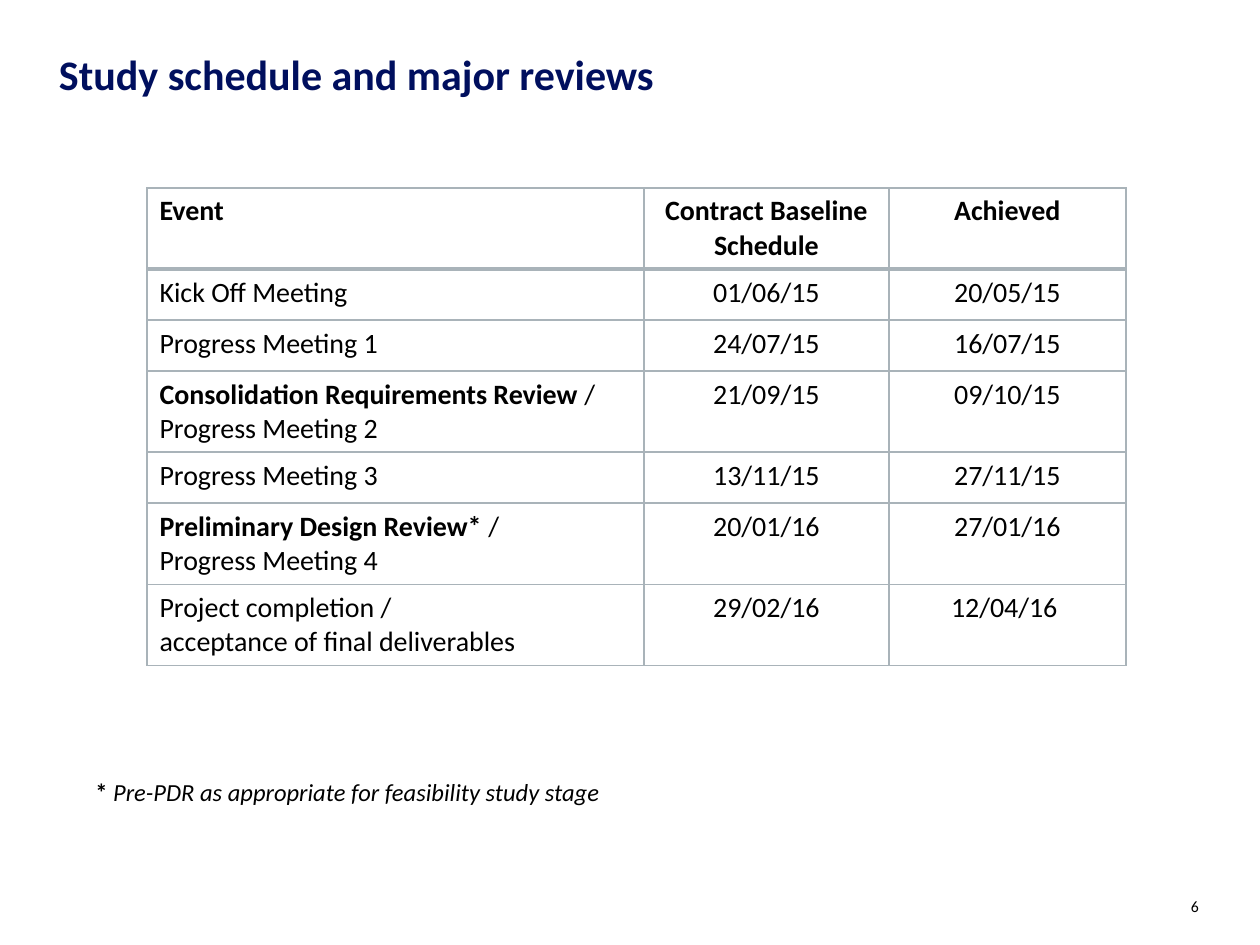
import lxml.etree
import pptx
import pptx.dml.color
import pptx.enum.text
import pptx.oxml.ns
import pptx.util

EMU_PER_PX = 914400 / 126
FONT, BLACK, NAVY, GRID = "Calibri", "000000", "000F5E", "A9B3B9"
ALIGN = pptx.enum.text.PP_ALIGN
FIT = pptx.enum.text.MSO_AUTO_SIZE
COLUMN_WIDTHS = [497, 245, 237]
ROW_HEIGHT = 51
SCHEDULE = [
    ([[("Event", True)]], "Contract Baseline Schedule", "Achieved"),
    ([[("Kick Off Meeting", False)]], "01/06/15", "20/05/15"),
    ([[("Progress Meeting 1", False)]], "24/07/15", "16/07/15"),
    ([[("Consolidation Requirements Review ", True), ("/ Progress Meeting 2", False)]],
     "21/09/15", "09/10/15"),
    ([[("Progress Meeting 3", False)]], "13/11/15", "27/11/15"),
    ([[("Preliminary Design Review* ", True), ("/", False)], [("Progress Meeting 4", False)]],
     "20/01/16", "27/01/16"),
    ([[("Project completion /", False)], [("acceptance of final deliverables", False)]],
     "29/02/16", "12/04/16 "),
]


def px(length):
    """Turn pixels into EMU."""
    return pptx.util.Emu(round(length * EMU_PER_PX))


def colour(code):
    """Turn a hex string into a colour."""
    return pptx.dml.color.RGBColor.from_string(code)


def style(para, size, code=BLACK, bold=None, align=ALIGN.LEFT, spacing=None):
    """Set the font, alignment and line spacing of a paragraph."""
    para.alignment = align
    if spacing:
        para.line_spacing = pptx.util.Pt(spacing)
    para.font.name = FONT
    para.font.size = pptx.util.Pt(size)
    para.font.color.rgb = colour(code)
    para.font.bold = bold


def place(box, left, top, width, height):
    """Move and size a box."""
    box.left, box.top, box.width, box.height = map(px, (left, top, width, height))


def remove_insets(frame):
    """Anchor text at the top with no inner margins."""
    frame.margin_left = frame.margin_right = frame.margin_top = frame.margin_bottom = 0
    frame.vertical_anchor = pptx.enum.text.MSO_ANCHOR.TOP
    frame.auto_size = FIT.NONE
    frame.word_wrap = True


def add_title(page, text):
    """Fill the title placeholder."""
    box = page.shapes.title
    place(box, 59, 53, 908, 106)
    remove_insets(box.text_frame)
    box.text_frame.text = text
    style(box.text_frame.paragraphs[0], 24, NAVY, True, spacing=26)


def add_page_number(page, text):
    """Add the page number at the lower right."""
    box = page.shapes.add_textbox(px(1125), px(896), px(74), px(30))
    remove_insets(box.text_frame)
    box.text_frame.text = text
    style(box.text_frame.paragraphs[0], 9, align=ALIGN.RIGHT, spacing=11)


def add_footnote(page, mark, text):
    """Add the footnote with a bold mark and italic text."""
    box = page.shapes.add_textbox(px(83), px(771), px(544), px(43))
    box.text_frame.word_wrap = False
    box.text_frame.auto_size = FIT.SHAPE_TO_FIT_TEXT
    para = box.text_frame.paragraphs[0]
    style(para, 14)
    for words, is_mark in ((mark, True), (text, False)):
        span = para.add_run()
        span.text = words
        span.font.bold, span.font.italic = is_mark, not is_mark


def set_borders(cell, top, bottom):
    """Draw the four borders of a cell, widths in points."""
    properties = cell._tc.get_or_add_tcPr()
    qn = pptx.oxml.ns.qn
    for side, width in (("lnL", 1), ("lnR", 1), ("lnT", top), ("lnB", bottom)):
        line = lxml.etree.SubElement(properties, qn(f"a:{side}"), w=str(pptx.util.Pt(width)))
        fill = lxml.etree.SubElement(line, qn("a:solidFill"))
        lxml.etree.SubElement(fill, qn("a:srgbClr"), val=GRID)


def fill_cell(cell, paragraphs, align):
    """Write paragraphs of (text, bold) spans into a cell."""
    frame = cell.text_frame
    for index, spans in enumerate(paragraphs):
        para = frame.add_paragraph() if index else frame.paragraphs[0]
        style(para, 16, bold=spans[0][1] if len(spans) == 1 else None, align=align)
        for text, bold in spans:
            span = para.add_run()
            span.text = text
            if len(spans) > 1:
                span.font.bold = bold


def add_schedule(page):
    """Add the table of events and dates."""
    count = len(SCHEDULE)
    table = page.shapes.add_table(count, len(COLUMN_WIDTHS), px(147), px(188),
                                  px(sum(COLUMN_WIDTHS)), px(ROW_HEIGHT * count)).table
    table.first_row = table.horz_banding = False
    for column, width in zip(table.columns, COLUMN_WIDTHS):
        column.width = px(width)
    for row, (event, *dates) in enumerate(SCHEDULE):
        table.rows[row].height = px(ROW_HEIGHT)
        contents = [event] + [[[(date, row == 0)]] for date in dates]
        for column, paragraphs in enumerate(contents):
            cell = table.cell(row, column)
            set_borders(cell, 3 if row == 1 else 1, 3 if row == 0 else 1)
            cell.fill.background()
            fill_cell(cell, paragraphs, ALIGN.CENTER if column else ALIGN.LEFT)


def main():
    """Build and save the slide."""
    deck = pptx.Presentation()
    deck.slide_width, deck.slide_height = px(1260), px(945)
    page = deck.slides.add_slide(deck.slide_layouts[5])
    add_title(page, "Study schedule and major reviews")
    add_page_number(page, "6")
    add_schedule(page)
    add_footnote(page, "* ", "Pre-PDR as appropriate for feasibility study stage")
    deck.save("out.pptx")


if __name__ == "__main__":
    main()
